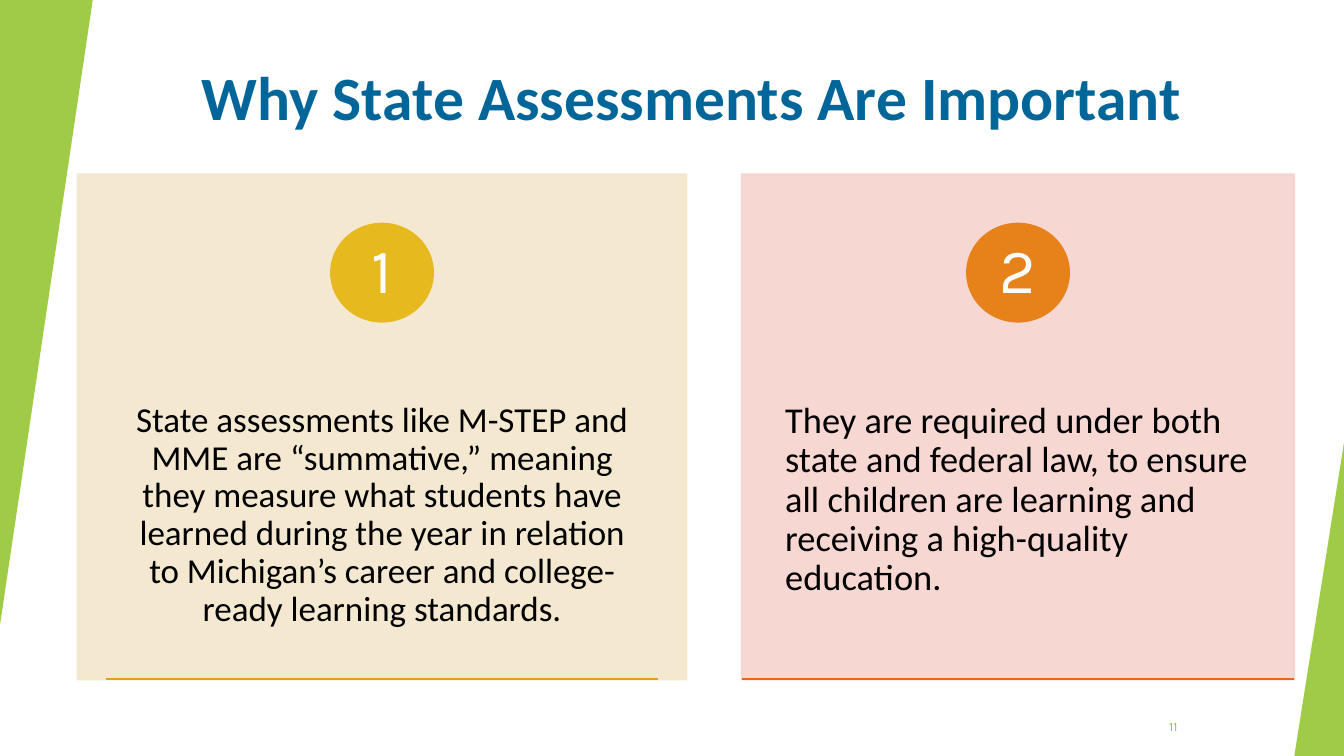
from lxml import etree
from pptx import Presentation
from pptx.dml.color import RGBColor
from pptx.enum import shapes, text
from pptx.oxml import ns
from pptx.util import Pt

GREEN = RGBColor(0x90, 0xC2, 0x26)
BLUE = RGBColor(0x00, 0x66, 0x99)
BLACK = RGBColor(0, 0, 0)
WHITE = RGBColor(255, 255, 255)
SAND = RGBColor(0xF5, 0xE6, 0xCD)
GOLD = RGBColor(0xE6, 0xB9, 0x1E)
AMBER = RGBColor(0xE6, 0x9E, 0x1C)
PINK = RGBColor(0xF6, 0xD3, 0xCC)
ORANGE = RGBColor(0xE7, 0x82, 0x1A)
RUST = RGBColor(0xE7, 0x66, 0x18)
LEFT, CENTER, RIGHT = text.PP_ALIGN.LEFT, text.PP_ALIGN.CENTER, text.PP_ALIGN.RIGHT
TOP, MIDDLE = text.MSO_ANCHOR.TOP, text.MSO_ANCHOR.MIDDLE

TITLE = "Why State Assessments Are Important "
PAGE = "11"
REASONS = [
    dict(number="1", left=55.44, width=434.88, size=25, align=CENTER,
         card=SAND, badge=GOLD, rule=AMBER,
         body="State assessments like M-STEP and MME are “summative,” meaning they "
              "measure what students have learned during the year in relation to "
              "Michigan’s career and college-ready learning standards."),
    dict(number="2", left=529.92, width=394.56, size=26, align=LEFT,
         card=PINK, badge=ORANGE, rule=RUST,
         body="They are required under both state and federal law, to ensure all "
              "children are learning and receiving a high-quality education."),
]
TRIANGLES = [(0, 0, 66.24, 446.4, 180), (924.48, 316.08, 35.52, 223.92, 0)]
CARD_TOP, CARD_H = 124.56, 360.72
BODY_TOP, BODY_H = 261.36, 216.72
BADGE_TOP, BADGE_W, BADGE_H = 159.84, 72.72, 69.84
RULE_W = 394.56

prs = Presentation()
prs.slide_width, prs.slide_height = Pt(960), Pt(540)
s = prs.slides.add_slide(prs.slide_layouts[6])


def set_alpha(sp, percent):
    for clr in sp._element.spPr.iter(ns.qn("a:srgbClr")):
        etree.SubElement(clr, ns.qn("a:alpha"), val=str(percent * 1000))


def add_shape(kind, x, y, w, h, color, outline=True):
    sp = s.shapes.add_shape(kind, Pt(x), Pt(y), Pt(w), Pt(h))
    sp.shadow.inherit = False
    sp.fill.solid()
    sp.fill.fore_color.rgb = color
    if outline:
        sp.line.color.rgb = color
        sp.line.width = Pt(1.5)
    else:
        sp.line.fill.background()
    return sp


def write(sp, words, font, size, color, align, anchor=TOP, inset=(7.2, 3.6),
          spacing=1.0, bold=False):
    tf = sp.text_frame
    tf.word_wrap = True
    tf.vertical_anchor = anchor
    tf.margin_left = tf.margin_right = Pt(inset[0])
    tf.margin_top = tf.margin_bottom = Pt(inset[1])
    p = tf.paragraphs[0]
    p.text = words
    p.alignment = align
    p.line_spacing = spacing
    p.font.name, p.font.size, p.font.bold = font, Pt(size), bold
    p.font.color.rgb = color


def add_text(x, y, w, h, *args, **kwargs):
    write(s.shapes.add_textbox(Pt(x), Pt(y), Pt(w), Pt(h)), *args, **kwargs)


def add_rule(x, y, w, color):
    c = s.shapes.add_connector(shapes.MSO_CONNECTOR.STRAIGHT,
                               Pt(x), Pt(y), Pt(x + w), Pt(y))
    c.line.color.rgb = color
    c.line.width = Pt(1.5)
    etree.SubElement(c._element.spPr, ns.qn("a:effectLst"))


for x, y, w, h, turn in TRIANGLES:
    sp = add_shape(shapes.MSO_SHAPE.ISOSCELES_TRIANGLE, x, y, w, h, GREEN, outline=False)
    sp.adjustments[0] = 1.0
    sp.rotation = turn
    set_alpha(sp, 85)

add_text(97.92, 38.88, 802.8, 86.4, TITLE, "Calibri", 44, BLUE, CENTER, bold=True)

for reason in REASONS:
    left, width = reason["left"], reason["width"]
    middle = left + width / 2
    card = add_shape(shapes.MSO_SHAPE.RECTANGLE, left, CARD_TOP, width, CARD_H, reason["card"])
    set_alpha(card, 90)
    add_text(left, BODY_TOP, width, BODY_H, reason["body"], "Calibri", reason["size"],
             BLACK, reason["align"], inset=(30.96, 25.92), spacing=0.9)
    badge = add_shape(shapes.MSO_SHAPE.OVAL, middle - BADGE_W / 2, BADGE_TOP,
                      BADGE_W, BADGE_H, reason["badge"])
    write(badge, reason["number"], "Karla", 45, WHITE, CENTER, MIDDLE,
          inset=(0, 0), spacing=0.9)
    add_rule(middle - RULE_W / 2, CARD_TOP + CARD_H, RULE_W, reason["rule"])

add_text(794.16, 504.72, 54, 28.8, PAGE, "Karla", 9, GREEN, RIGHT, MIDDLE)

prs.save("out.pptx")
